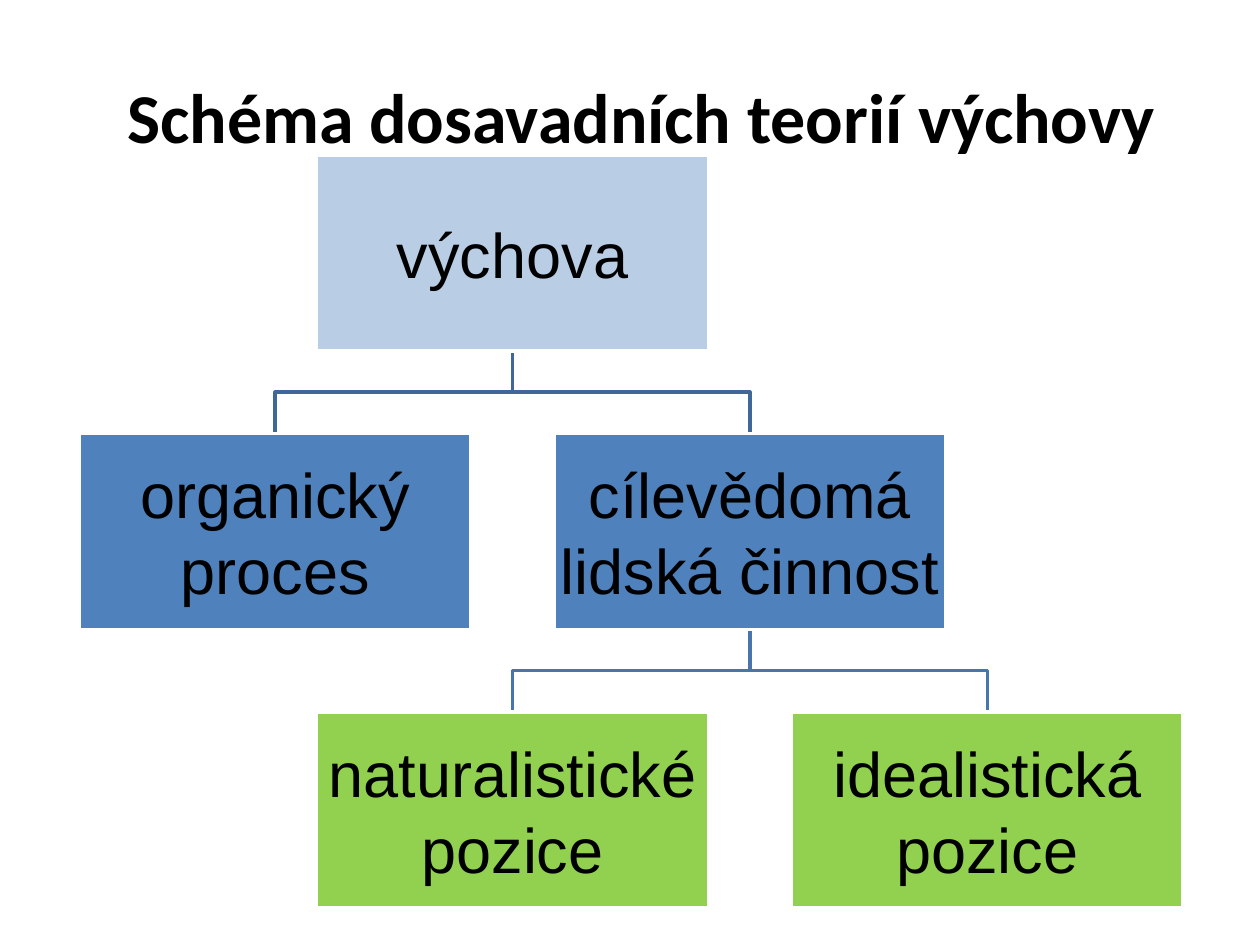
from pptx import Presentation
from pptx.dml.color import RGBColor
from pptx.enum.shapes import MSO_SHAPE
from pptx.enum.text import MSO_ANCHOR, PP_ALIGN
from pptx.util import Pt

COLORS = {
    "text": "000000", "border": "FFFFFF",
    "root": "B9CDE5", "branch": "4F81BD", "leaf": "92D050",
    "upper_link": "3F6797", "lower_link": "4875AC",
}
NODES = {
    "výchova": (1, 0, "root"),
    "organický proces": (0, 1, "branch"),
    "cílevědomá lidská činnost": (2, 1, "branch"),
    "naturalistické pozice": (1, 2, "leaf"),
    "idealistická pozice": (3, 2, "leaf"),
}
LINKS = [
    ("cílevědomá lidská činnost", "idealistická pozice", "lower_link"),
    ("cílevědomá lidská činnost", "naturalistické pozice", "lower_link"),
    ("výchova", "cílevědomá lidská činnost", "upper_link"),
    ("výchova", "organický proces", "upper_link"),
]
NODE_W, NODE_H = 224, 112.2


def rgb(name):
    return RGBColor.from_string(COLORS[name])


def write(tf, text, font, size, bold=False):
    tf.word_wrap = True
    tf.vertical_anchor = MSO_ANCHOR.MIDDLE
    p = tf.paragraphs[0]
    p.alignment = PP_ALIGN.CENTER
    r = p.add_run()
    r.text = text
    r.font.name, r.font.size, r.font.bold = font, Pt(size), bold
    r.font.color.rgb = rgb("text")


def add_title(s, x, y, w, h):
    sp = s.shapes.title
    sp.left, sp.top, sp.width, sp.height = map(Pt, (x, y, w, h))
    write(sp.text_frame, "Schéma dosavadních teorií výchovy", "Calibri", 40, True)


def add_link(s, start, end, color):
    (x1, y1), (x2, y2) = start, end
    mid = (y1 + y2) / 2
    fb = s.shapes.build_freeform(Pt(x1), Pt(y1))
    fb.add_line_segments([(Pt(x), Pt(y)) for x, y in
                          ((x1, mid), (x2, mid), (x2, y2))], close=False)
    sp = fb.convert_to_shape()
    sp.shadow.inherit = False
    sp.fill.background()
    sp.line.color.rgb, sp.line.width = rgb(color), Pt(2)


def add_node(s, x, y, text, color):
    sp = s.shapes.add_shape(MSO_SHAPE.RECTANGLE, Pt(x), Pt(y), Pt(NODE_W), Pt(NODE_H))
    sp.shadow.inherit = False
    sp.fill.solid()
    sp.fill.fore_color.rgb = rgb(color)
    sp.line.color.rgb, sp.line.width = rgb("border"), Pt(2)
    tf = sp.text_frame
    tf.margin_left = tf.margin_right = tf.margin_top = tf.margin_bottom = Pt(2)
    write(tf, text, "Arial", 36)


def add_tree(s, x, y, w, h):
    col_step, row_step = (w - NODE_W) / 3, (h - NODE_H) / 2
    spots = {text: (x + col * col_step, y + row * row_step)
             for text, (col, row, _) in NODES.items()}
    for parent, child, color in LINKS:
        (px, py), (cx, cy) = spots[parent], spots[child]
        add_link(s, (px + NODE_W / 2, py + NODE_H), (cx + NODE_W / 2, cy), color)
    for text, (_, _, color) in NODES.items():
        add_node(s, *spots[text], text, color)


def main():
    prs = Presentation()
    prs.slide_width, prs.slide_height = Pt(720), Pt(540)
    s = prs.slides.add_slide(prs.slide_layouts[5])
    add_title(s, 42.5, 21, 648, 90)
    add_tree(s, 45.2, 88.5, 631, 430.5)
    prs.save("out.pptx")


if __name__ == "__main__":
    main()
